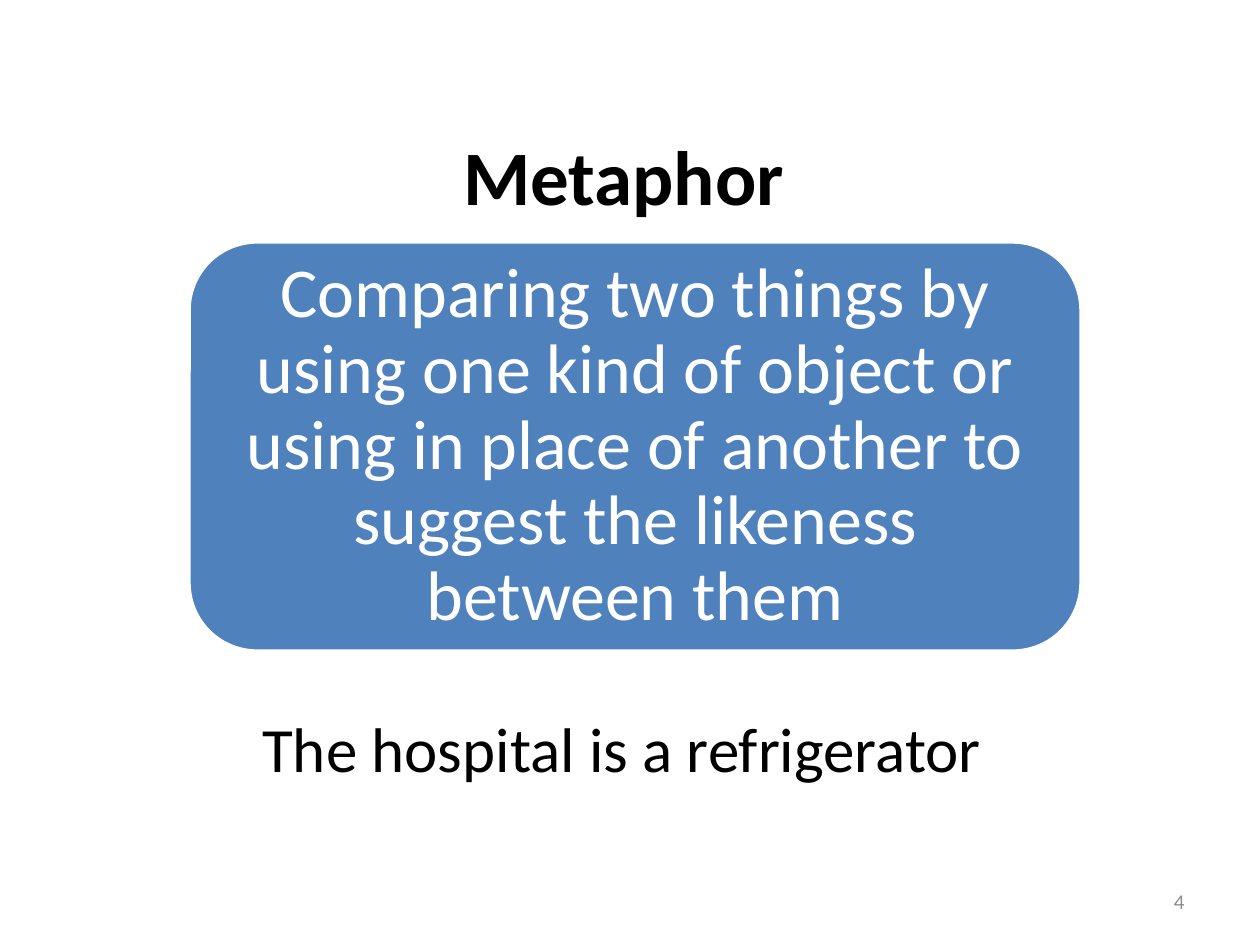
"""Build the slide that defines a metaphor and gives an example."""
from dataclasses import dataclass

from pptx import Presentation
from pptx.dml.color import RGBColor
from pptx.enum.shapes import MSO_SHAPE
from pptx.enum.text import MSO_ANCHOR, PP_ALIGN
from pptx.util import Inches, Pt

ROUNDED = MSO_SHAPE.ROUNDED_RECTANGLE
TOP, MIDDLE = MSO_ANCHOR.TOP, MSO_ANCHOR.MIDDLE
CENTER, RIGHT = PP_ALIGN.CENTER, PP_ALIGN.RIGHT
WIDTH, HEIGHT = 10, 7.5
TITLE_ONLY = 5


@dataclass(frozen=True)
class Theme:
    font: str = "Calibri"
    ink: str = "000000"
    paper: str = "FFFFFF"
    panel: str = "4F81BD"
    muted: str = "8C8C8C"
    title: int = 44
    definition: int = 40
    example: int = 36
    number: int = 12


@dataclass(frozen=True)
class Label:
    text: str
    size: int
    color: str
    align: PP_ALIGN = CENTER
    anchor: MSO_ANCHOR = MIDDLE
    bold: bool = False
    spacing: float = 1.0


@dataclass(frozen=True)
class Box:
    """Position and size as shares of the slide."""
    left: float
    top: float
    width: float
    height: float

    def lengths(self) -> tuple:
        return (Inches(self.left * WIDTH), Inches(self.top * HEIGHT),
                Inches(self.width * WIDTH), Inches(self.height * HEIGHT))


THEME = Theme()


def write(shape, label: Label) -> None:
    frame = shape.text_frame
    frame.word_wrap = True
    frame.vertical_anchor = label.anchor
    paragraph = frame.paragraphs[0]
    paragraph.text = label.text
    paragraph.alignment = label.align
    paragraph.line_spacing = label.spacing
    font = paragraph.font
    font.name, font.size, font.bold = THEME.font, Pt(label.size), label.bold
    font.color.rgb = RGBColor.from_string(label.color)


def add_title(slide, box: Box, label: Label) -> None:
    title = slide.shapes.title
    title.left, title.top, title.width, title.height = box.lengths()
    write(title, label)


def add_panel(slide, box: Box, label: Label) -> None:
    panel = slide.shapes.add_shape(ROUNDED, *box.lengths())
    panel.shadow.inherit = False
    panel.fill.solid()
    panel.fill.fore_color.rgb = RGBColor.from_string(THEME.panel)
    panel.line.color.rgb = RGBColor.from_string(THEME.paper)
    panel.line.width = Pt(2)
    frame = panel.text_frame
    frame.margin_left = frame.margin_right = Inches(0.17)
    frame.margin_top = frame.margin_bottom = Inches(0.17)
    write(panel, label)


def add_text(slide, box: Box, label: Label) -> None:
    write(slide.shapes.add_textbox(*box.lengths()), label)


def main() -> None:
    presentation = Presentation()
    presentation.slide_width = Inches(WIDTH)
    presentation.slide_height = Inches(HEIGHT)
    slide = presentation.slides.add_slide(presentation.slide_layouts[TITLE_ONLY])
    add_title(slide, Box(0.07, 0.08, 0.85, 0.21),
              Label("Metaphor", THEME.title, THEME.ink, bold=True))
    add_panel(slide, Box(0.15, 0.256, 0.708, 0.433),
              Label("Comparing two things by using one kind of object or using "
                    "in place of another to suggest the likeness between them",
                    THEME.definition, THEME.paper, spacing=0.9))
    add_text(slide, Box(0.16, 0.744, 0.667, 0.095),
             Label("The hospital is a refrigerator", THEME.example, THEME.ink,
                   anchor=TOP))
    add_text(slide, Box(0.717, 0.927, 0.233, 0.053),
             Label("4", THEME.number, THEME.muted, align=RIGHT))
    presentation.save("out.pptx")


if __name__ == "__main__":
    main()
